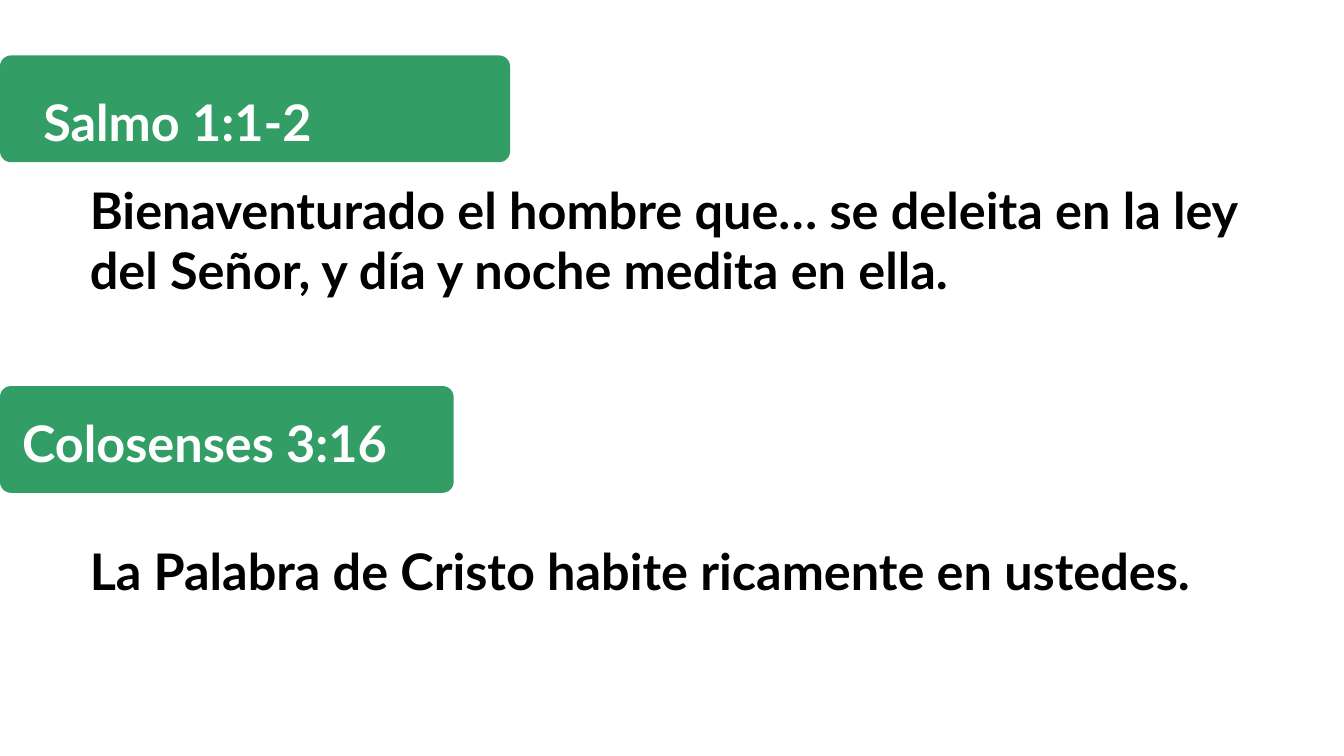
from dataclasses import dataclass

from lxml import etree
from pptx import Presentation
from pptx import util as u
from pptx.dml.color import RGBColor
from pptx.enum import shapes, text
from pptx.oxml import ns
from pptx.slide import Slide

GREEN = RGBColor(0x00, 0x85, 0x40)
WHITE = RGBColor(0xFF, 0xFF, 0xFF)
BLACK = RGBColor(0x00, 0x00, 0x00)

BANNER_HEIGHT = 1.06
CORNER_RADIUS = 0.11
BANNER_OPACITY = 80
VERSE_LEFT, VERSE_WIDTH, VERSE_HEIGHT = 0.89, 11.55, 2.1


@dataclass(frozen=True)
class Passage:
    reference: str
    verse: str
    banner_top: float
    banner_width: float
    reference_left: float
    reference_top: float
    reference_width: float
    verse_top: float


PASSAGES = [
    Passage("Salmo 1:1-2",
            "Bienaventurado el hombre que… se deleita en la ley del Señor, "
            "y día y noche medita en ella.",
            0.55, 5.06, 0.43, 0.66, 5.67, 1.8),
    Passage("Colosenses 3:16",
            "La Palabra de Cristo habite ricamente en ustedes.",
            3.83, 4.5, 0.22, 3.85, 6.1, 5.38),
]


def add_banner(page: Slide, top: float, width: float) -> None:
    banner = page.shapes.add_shape(
        shapes.MSO_SHAPE.ROUNDED_RECTANGLE, u.Inches(0), u.Inches(top),
        u.Inches(width), u.Inches(BANNER_HEIGHT))
    banner.adjustments[0] = CORNER_RADIUS / BANNER_HEIGHT
    banner.shadow.inherit = False
    banner.line.fill.background()
    banner.fill.solid()
    banner.fill.fore_color.rgb = GREEN
    color = banner.fill._xPr.find(ns.qn("a:solidFill")).find(ns.qn("a:srgbClr"))
    etree.SubElement(color, ns.qn("a:alpha"), val=str(BANNER_OPACITY * 1000))


def add_label(page: Slide, words: str, left: float, top: float, width: float,
              height: float, color: RGBColor, spacing: float) -> None:
    box = page.shapes.add_textbox(
        u.Inches(left), u.Inches(top), u.Inches(width), u.Inches(height))
    frame = box.text_frame
    frame.word_wrap = True
    frame.vertical_anchor = text.MSO_ANCHOR.TOP
    frame.margin_left = frame.margin_right = u.Inches(0)
    frame.margin_top = frame.margin_bottom = u.Inches(0)
    frame.text = words
    para = frame.paragraphs[0]
    para.line_spacing = spacing
    for span in para.runs:
        span.font.name = "Lato"
        span.font.size = u.Pt(36)
        span.font.bold = True
        span.font.color.rgb = color


def add_passage(page: Slide, passage: Passage) -> None:
    add_banner(page, passage.banner_top, passage.banner_width)
    add_label(page, passage.reference, passage.reference_left,
              passage.reference_top, passage.reference_width, 0.85, WHITE, 1.4)
    add_label(page, passage.verse, VERSE_LEFT, passage.verse_top,
              VERSE_WIDTH, VERSE_HEIGHT, BLACK, 0.99)


def main() -> None:
    deck = Presentation()
    deck.slide_width = u.Inches(13.33)
    deck.slide_height = u.Inches(7.5)
    page = deck.slides.add_slide(deck.slide_layouts[6])
    for passage in PASSAGES:
        add_passage(page, passage)
    deck.save("out.pptx")


if __name__ == "__main__":
    main()
